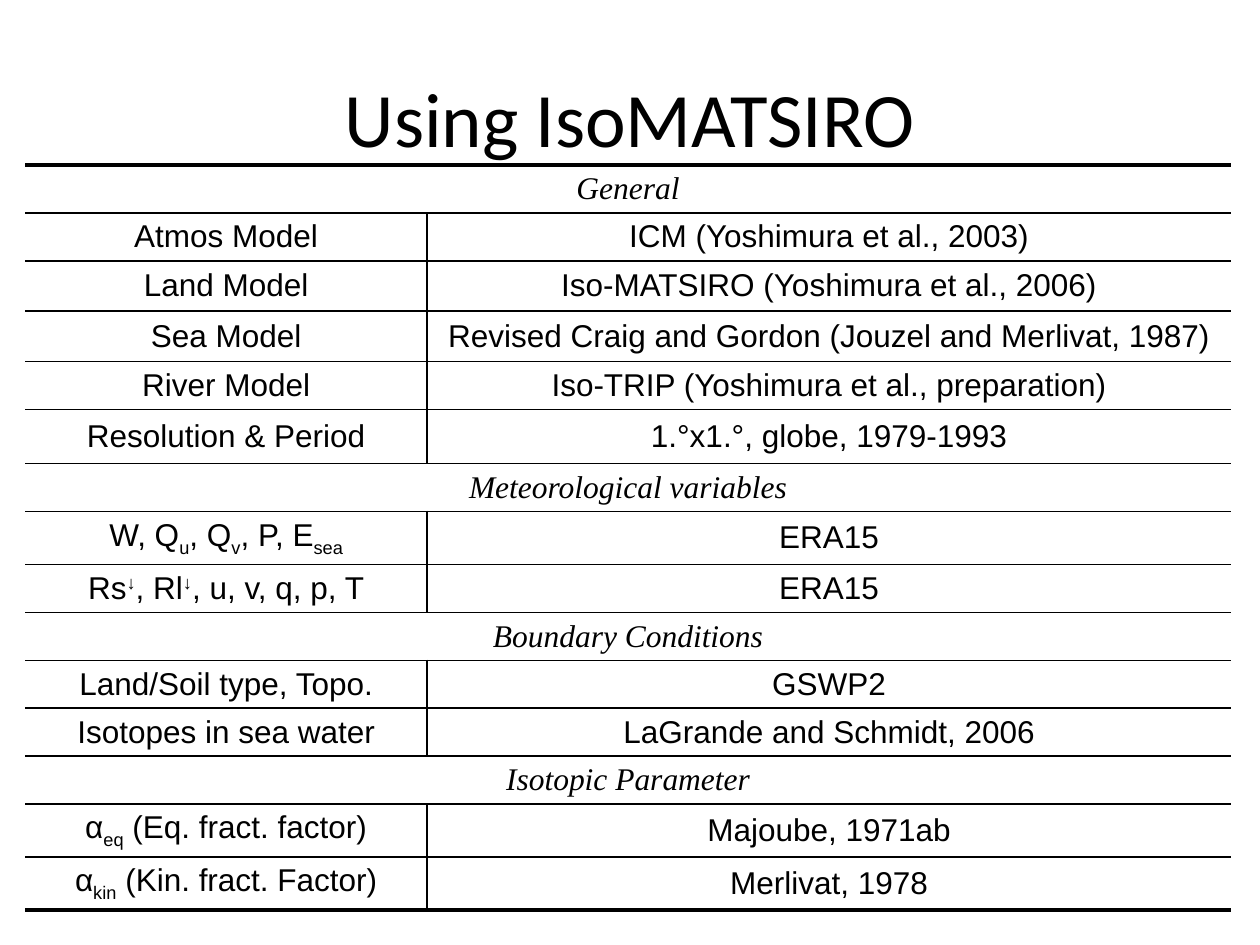
import pptx
import pptx.util
import pptx.dml.color
import pptx.enum.text
import pptx.oxml
import pptx.oxml.ns

Inches, Pt = pptx.util.Inches, pptx.util.Pt
ALIGN, ANCHOR = pptx.enum.text.PP_ALIGN, pptx.enum.text.MSO_ANCHOR
HUES = {"ink": "000000", "paper": "FFFFFF"}
THIN, THICK = 1, 2.25

# Label, value and row height; no value marks a section heading.
# Pieces between bars are lowered, arrows are raised.
ROWS = [
    ("General", None, 0.38),
    ("Atmos Model", "ICM (Yoshimura et al., 2003)", 0.38),
    ("Land Model", "Iso-MATSIRO (Yoshimura et al., 2006)", 0.4),
    ("Sea Model", "Revised Craig and Gordon (Jouzel and Merlivat, 1987)", 0.4),
    ("River Model", "Iso-TRIP (Yoshimura et al., preparation)", 0.38),
    ("Resolution & Period", "1.°x1.°, globe, 1979-1993", 0.43),
    ("Meteorological variables", None, 0.38),
    ("W, Q|u|, Q|v|, P, E|sea", "ERA15", 0.42),
    ("Rs|↓|, Rl|↓|, u, v, q, p, T", "ERA15", 0.38),
    ("Boundary Conditions", None, 0.38),
    ("Land/Soil type, Topo.", "GSWP2", 0.38),
    ("Isotopes in sea water", "LaGrande and Schmidt, 2006", 0.38),
    ("Isotopic Parameter", None, 0.38),
    ("α|eq| (Eq. fract. factor)", "Majoube, 1971ab", 0.42),
    ("α|kin| (Kin. fract. Factor)", "Merlivat, 1978", 0.42),
]


def tint(name):
    return pptx.dml.color.RGBColor.from_string(HUES[name])


def write(para, text, face, size, slant=False):
    para.alignment = ALIGN.CENTER
    for i, piece in enumerate(text.split("|")):
        run = para.add_run()
        run.text = piece
        font = run.font
        font.name, font.size, font.italic = face, Pt(size), slant
        font.color.rgb = tint("ink")
        if i % 2:
            shift = 30000 if piece == "↓" else -25000
            run._r.get_or_add_rPr().set("baseline", str(shift))


def border(cell, **sides):
    """Draw each side (L, R, T, B) at its width; 0 hides it."""
    props = cell._tc.get_or_add_tcPr()
    for side in "LRTB":
        width = sides[side]
        fill = (f'<a:solidFill><a:srgbClr val="{HUES["ink"]}"/></a:solidFill>'
                if width else "<a:noFill/>")
        props.append(pptx.oxml.parse_xml(
            f'<a:ln{side} {pptx.oxml.ns.nsdecls("a")} w="{Pt(width)}">'
            f"{fill}</a:ln{side}>"))


def title(slide, x, y, w, h):
    frame = slide.shapes.add_textbox(
        Inches(x), Inches(y), Inches(w), Inches(h)).text_frame
    frame.word_wrap = True
    frame.vertical_anchor = ANCHOR.MIDDLE
    write(frame.paragraphs[0], "Using IsoMATSIRO", "Calibri", 44)


def setup(slide, x, y, w):
    high = sum(row[2] for row in ROWS)
    grid = slide.shapes.add_table(
        len(ROWS), 2, Inches(x), Inches(y), Inches(w), Inches(high)).table
    grid.first_row = grid.horz_banding = False
    # The label column takes one third
    grid.columns[0].width = Inches(w / 3)
    grid.columns[1].width = Inches(w * 2 / 3)

    for r, (label, value, tall) in enumerate(ROWS):
        grid.rows[r].height = Inches(tall)
        head = value is None
        mid = 0 if head else THIN
        for c, text in enumerate((label, value)):
            cell = grid.cell(r, c)
            border(cell, L=mid if c else 0, R=0 if c else mid,
                   T=THIN if r else THICK,
                   B=THIN if r < len(ROWS) - 1 else THICK)
            cell.fill.solid()
            cell.fill.fore_color.rgb = tint("paper")
            cell.vertical_anchor = ANCHOR.MIDDLE
            cell.margin_top = cell.margin_bottom = Inches(0.04)
            if text:
                write(cell.text_frame.paragraphs[0], text,
                      "Times New Roman" if head else "Arial", 18, head)
        if head:
            grid.cell(r, 0).merge(grid.cell(r, 1))


def main():
    deck = pptx.Presentation()
    deck.slide_width, deck.slide_height = Inches(10), Inches(7.5)
    slide = deck.slides.add_slide(deck.slide_layouts[6])
    title(slide, 0.5, 0.3, 9, 1.25)
    setup(slide, 0.2, 1.31, 9.57)
    deck.save("out.pptx")


if __name__ == "__main__":
    main()
